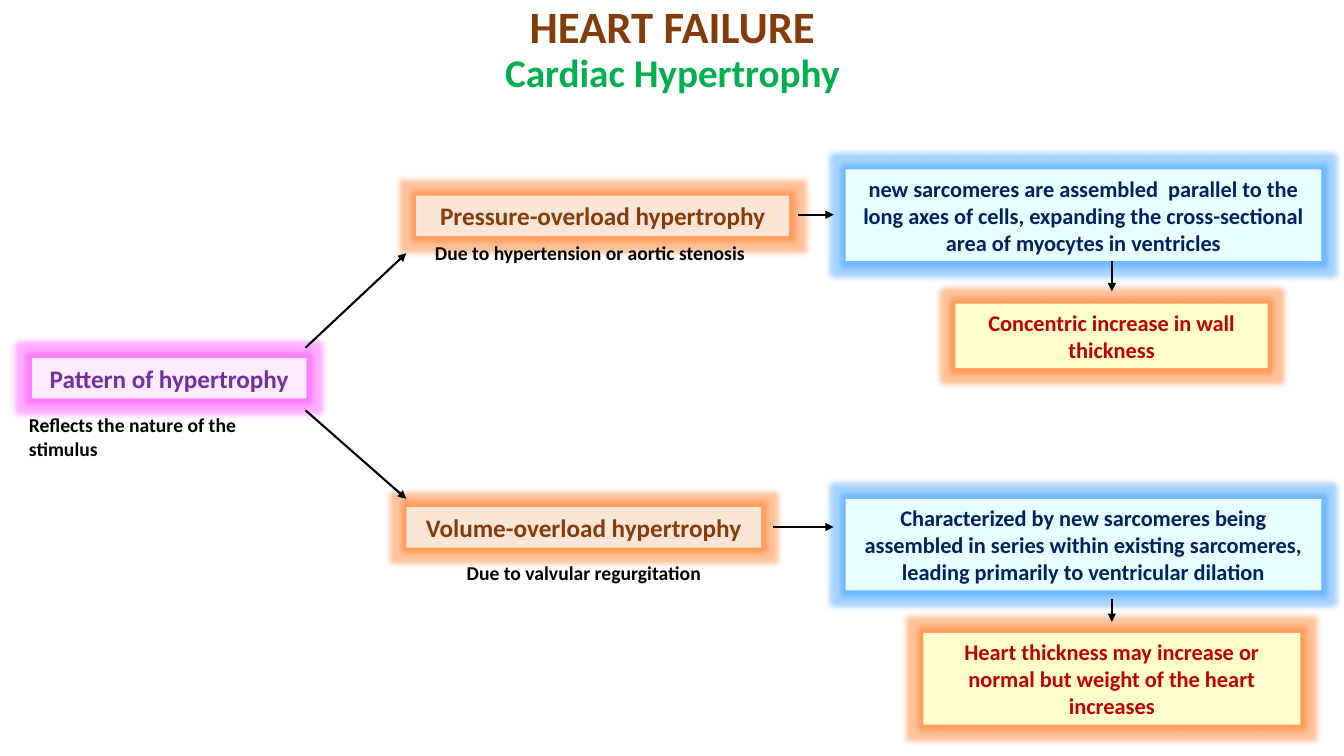
from lxml import etree
from pptx import Presentation
from pptx import util as u
from pptx.dml.color import RGBColor
from pptx.enum import shapes, text
from pptx.oxml.ns import qn


def paint(value):
    """Turn a hex string into a colour."""
    return RGBColor.from_string(value)


class Board:
    """Hold the style and the slide, and draw each kind of element."""

    font = "Calibri"
    ink = "000000"
    glow = 101600

    def __init__(self, slide):
        """Keep the slide to draw on."""
        self.slide = slide

    def letter(self, frame, lines, align, anchor, space=None):
        """Fill a frame with (words, size, colour) lines."""
        frame.word_wrap = True
        frame.vertical_anchor = anchor
        for i, (words, size, tone) in enumerate(lines):
            para = frame.paragraphs[0] if i == 0 else frame.add_paragraph()
            para.text = words
            para.alignment = align
            if space:
                para.line_spacing = space
            font = para.font
            font.name, font.size, font.bold = self.font, u.Pt(size), True
            font.color.rgb = paint(tone)

    def label(self, spot, lines, align=text.PP_ALIGN.CENTER, space=None):
        """Add plain text."""
        item = self.slide.shapes.add_textbox(*map(u.Cm, spot))
        self.letter(item.text_frame, lines, align, text.MSO_ANCHOR.TOP, space)

    def box(self, spot, words, size, style):
        """Add a filled box with a soft glow."""
        fill, tone, halo = style
        item = self.slide.shapes.add_shape(
            shapes.MSO_SHAPE.RECTANGLE, *map(u.Cm, spot))
        item.fill.solid()
        item.fill.fore_color.rgb = paint(fill)
        item.line.fill.background()
        item.shadow.inherit = False
        effect = item.element.spPr.find(qn("a:effectLst"))
        glow = etree.SubElement(effect, qn("a:glow"), rad=str(self.glow))
        shade = etree.SubElement(glow, qn("a:srgbClr"), val=halo)
        etree.SubElement(shade, qn("a:alpha"), val="40000")
        self.letter(item.text_frame, [(words, size, tone)],
                    text.PP_ALIGN.CENTER, text.MSO_ANCHOR.MIDDLE)

    def arrow(self, *ends):
        """Add a straight arrow."""
        item = self.slide.shapes.add_connector(
            shapes.MSO_CONNECTOR.STRAIGHT, *map(u.Cm, ends))
        item.line.color.rgb = paint(self.ink)
        item.line.width = u.Pt(1.5)
        props = item.element.spPr
        etree.SubElement(props.find(qn("a:ln")), qn("a:tailEnd"),
                         type="triangle")
        etree.SubElement(props, qn("a:effectLst"))


def main():
    """Build the slide and save it."""
    deck = Presentation()
    deck.slide_width, deck.slide_height = u.Cm(33.87), u.Cm(19.05)
    board = Board(deck.slides.add_slide(deck.slide_layouts[6]))

    pink = ("FFEBFF", "7030A0", "FF33FF")
    peach = ("FBE5D6", "843C0B", "FF6600")
    blue = ("E7FFFF", "002060", "1E8FFF")
    cream = ("FFFFCC", "C00000", "FF6600")

    board.label((2.34, 0, 29.21, 2.9),
                [("HEART FAILURE", 32, "843C0B"),
                 ("Cardiac Hypertrophy", 28, "00B050")], space=0.9)

    for spot, words, size, style in [
        ((0.81, 9.02, 6.91, 1.02), "Pattern of hypertrophy", 18, pink),
        ((10.49, 4.93, 9.4, 1.02), "Pressure-overload hypertrophy", 18, peach),
        ((10.24, 12.78, 8.94, 1.02), "Volume-overload hypertrophy", 18, peach),
        ((21.31, 4.27, 11.99, 2.31),
         "new sarcomeres are assembled  parallel to the long axes of cells, "
         "expanding the cross-sectional area of myocytes in ventricles",
         16, blue),
        ((21.31, 12.57, 11.99, 2.31),
         "Characterized by new sarcomeres being assembled in series within "
         "existing sarcomeres, leading primarily to ventricular dilation",
         16, blue),
        ((23.27, 15.95, 9.5, 2.31),
         "Heart thickness may increase or normal but weight of the heart "
         "increases", 16, cream),
        ((24.08, 7.65, 7.87, 1.63),
         "Concentric increase in wall thickness", 16, cream),
    ]:
        board.box(spot, words, size, style)

    for spot, words, align in [
        ((10.64, 5.94, 8.46, 0.86), "Due to hypertension or aortic stenosis",
         text.PP_ALIGN.CENTER),
        ((10.64, 14, 8.15, 0.86), "Due to valvular regurgitation",
         text.PP_ALIGN.CENTER),
        ((0.48, 10.29, 7.5, 0.86), "Reflects the nature of the stimulus",
         text.PP_ALIGN.LEFT),
    ]:
        board.label(spot, [(words, 14, board.ink)], align)

    for ends in [
        (7.7, 8.76, 10.24, 6.38),
        (7.7, 10.34, 10.24, 12.57),
        (20.12, 5.41, 21.01, 5.41),
        (19.48, 13.28, 21.01, 13.28),
        (28.02, 6.58, 28.02, 7.34),
        (28.02, 15.09, 28.02, 15.67),
    ]:
        board.arrow(*ends)

    deck.save("out.pptx")


if __name__ == "__main__":
    main()
